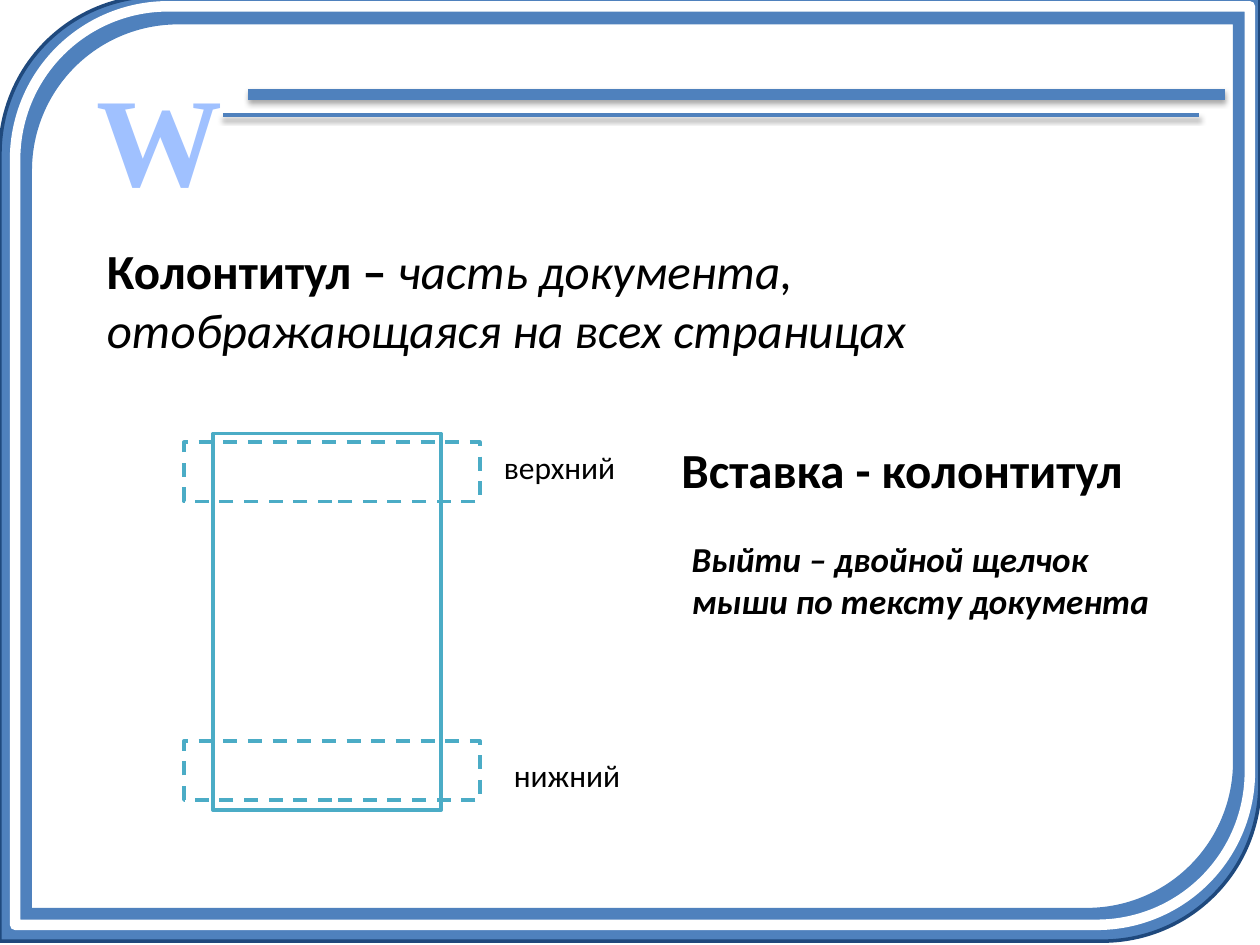
from lxml import etree
from pptx import Presentation
from pptx import util as u
from pptx.dml.color import RGBColor
from pptx.enum import dml, shapes, text
from pptx.oxml import ns

COLUMNS, ROWS = 100, 75
WIDTH, HEIGHT = u.Inches(10), u.Inches(7.5)

COLORS = {
    "frame": "4F81BD",
    "frame_edge": "1F497D",
    "paper": "FFFFFF",
    "letter": "A0C1FF",
    "diagram": "4BACC6",
    "text": "000000",
}


def color(name):
    return RGBColor.from_string(COLORS[name])


def across(columns):
    return round(WIDTH * columns / COLUMNS)


def down(rows):
    return round(HEIGHT * rows / ROWS)


def place(left, top, width, height):
    return across(left), down(top), across(width), down(height)


def add_outline(slide, preset, box, line, weight, fill=None, dash=None):
    """Add a preset shape given in grid units; without a fill it is see-through."""
    shape = slide.shapes.add_shape(preset, *place(*box))
    shape.shadow.inherit = False
    if fill:
        shape.fill.solid()
        shape.fill.fore_color.rgb = color(fill)
    else:
        shape.fill.background()
    shape.line.color.rgb = color(line)
    shape.line.width = u.Pt(weight)
    if dash:
        shape.line.dash_style = dash


def add_shadow(connector):
    """Give a connector a soft shadow straight below it."""
    effects = etree.SubElement(connector._element.spPr, ns.qn("a:effectLst"))
    shadow = etree.SubElement(
        effects, ns.qn("a:outerShdw"), blurRad=str(u.Pt(3.1)),
        dist=str(u.Pt(1.8)), dir="5400000", rotWithShape="0")
    shade = etree.SubElement(shadow, ns.qn("a:srgbClr"), val=COLORS["text"])
    etree.SubElement(shade, ns.qn("a:alpha"), val="35000")


def add_rule(slide, left, top, length, weight):
    rule = slide.shapes.add_connector(
        shapes.MSO_CONNECTOR.STRAIGHT,
        across(left), down(top), across(left + length), down(top))
    rule.line.color.rgb = color("frame")
    rule.line.width = u.Pt(weight)
    add_shadow(rule)


def add_text(slide, box, runs, size, font="Calibri", ink="text", align=None):
    """Add one paragraph; each run is (words, bold, italic)."""
    frame = slide.shapes.add_textbox(*place(*box)).text_frame
    frame.word_wrap = True
    paragraph = frame.paragraphs[0]
    paragraph.alignment = align
    for words, bold, italic in runs:
        run = paragraph.add_run()
        run.text = words
        run.font.name = font
        run.font.size = u.Pt(size)
        run.font.bold = bold
        run.font.italic = italic
        run.font.color.rgb = color(ink)


def add_frame(slide):
    rounded = shapes.MSO_SHAPE.ROUND_2_DIAG_RECTANGLE
    add_outline(slide, rounded, (0, -0.3, 100, 75), "frame_edge", 2, fill="frame")
    add_outline(slide, rounded, (2.4, 1.8, 95.6, 70.4), "frame", 2, fill="paper")
    add_text(slide, (4.8, 4.3, 15.7, 13.5), [("W", True, False)], 72,
             font="Times New Roman", ink="letter", align=text.PP_ALIGN.CENTER)
    add_rule(slide, 19.7, 7.5, 77.5, 6)
    add_rule(slide, 17.7, 9.1, 77.5, 2.25)
    add_outline(slide, rounded, (1.2, 0.5, 98, 72.9), "paper", 6)


def add_page_diagram(slide):
    rectangle = shapes.MSO_SHAPE.RECTANGLE
    add_outline(slide, rectangle, (16.9, 34.4, 18.1, 29.9), "diagram", 2, fill="paper")
    for top in (35.1, 58.8):
        add_outline(slide, rectangle, (14.6, top, 23.5, 4.7), "diagram", 2,
                    dash=dml.MSO_LINE.DASH)
    for left, top, label in ((39, 35.1, "верхний"), (39.8, 59.5, "нижний")):
        add_text(slide, (left, top, 31.5, 4), [(label, False, False)], 18)


def main():
    presentation = Presentation()
    presentation.slide_width, presentation.slide_height = WIDTH, HEIGHT
    slide = presentation.slides.add_slide(presentation.slide_layouts[6])

    add_frame(slide)
    add_text(slide, (7.5, 18.6, 81.1, 10.4), [
        ("Колонтитул – ", True, False),
        ("часть документа, отображающаяся на всех страницах", False, True),
    ], 28)
    add_page_diagram(slide)
    add_text(slide, (53.1, 34.4, 38.6, 5.7),
             [("Вставка - колонтитул", True, False)], 28)
    add_text(slide, (53.9, 42.2, 38.6, 7.7),
             [("Выйти – двойной щелчок мыши по тексту документа", True, True)], 20)

    presentation.save("out.pptx")


if __name__ == "__main__":
    main()
